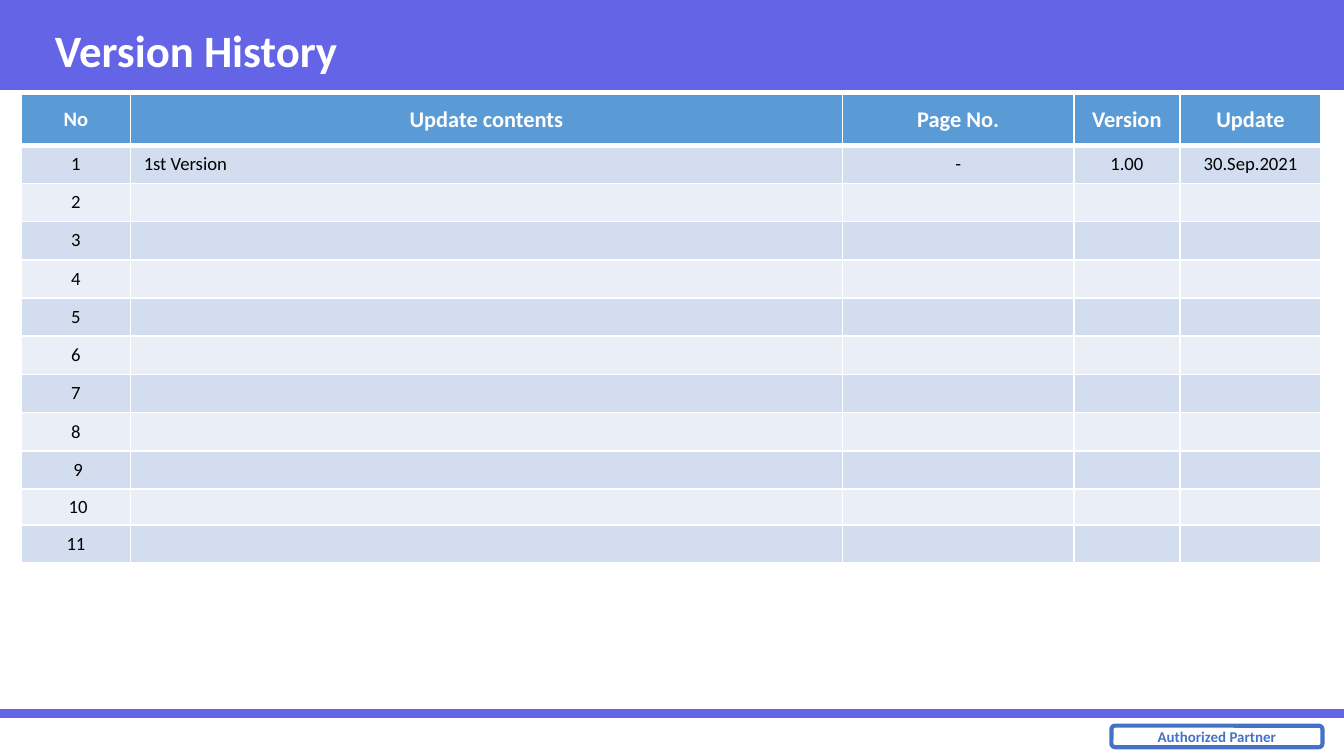
"""Build the version history slide."""
from lxml import etree
from pptx import Presentation
from pptx.dml.color import RGBColor
from pptx.enum.shapes import MSO_CONNECTOR, MSO_SHAPE
from pptx.enum.text import MSO_ANCHOR, PP_ALIGN
from pptx.oxml.ns import qn
from pptx.util import Inches, Pt

RECT, ROUND = MSO_SHAPE.RECTANGLE, MSO_SHAPE.ROUNDED_RECTANGLE
STRAIGHT = MSO_CONNECTOR.STRAIGHT
MIDDLE = MSO_ANCHOR.MIDDLE
LEFT, CENTER = PP_ALIGN.LEFT, PP_ALIGN.CENTER

FONT = "Calibri"
VIOLET = RGBColor(0x64, 0x64, 0xE6)
BLUE = RGBColor(0x44, 0x72, 0xC4)
SKY = RGBColor(0x5B, 0x9B, 0xD5)
PALE = RGBColor(0xD2, 0xDE, 0xEF)
MIST = RGBColor(0xEA, 0xEF, 0xF7)
WHITE = RGBColor(0xFF, 0xFF, 0xFF)
BLACK = RGBColor(0x00, 0x00, 0x00)

HEADS = ["No", "Update contents", "Page No.", "Version", "Update"]
FIRST = ["1", "1st Version", "-", "1.00", "30.Sep.2021"]
LATER = ["2", "3", "4", "5", "6", "7", "8", " 9", " 10", "11"]
WIDTHS = [0.81, 5.3, 1.72, 0.79, 1.05]
WIDE, TALL = 10, 3.49
HEAD, TAIL = 0.38, [0.27, 0.28]


def write(frame, text, size, color, bold=False, align=CENTER):
    """Put one styled paragraph into a text frame."""
    frame.text = text
    para = frame.paragraphs[0]
    para.alignment = align
    for run in para.runs:
        font = run.font
        font.name, font.size, font.bold = FONT, Pt(size), bold
        font.color.rgb = color
    if not text:
        end = etree.SubElement(para._p, qn("a:endParaRPr"))
        end.set("sz", str(size * 100))


def add_band(slide):
    """Add the title band and its heading."""
    band = slide.shapes.add_shape(RECT, 0, 0, Inches(WIDE), Inches(0.67))
    band.shadow.inherit = False
    band.fill.solid()
    band.fill.fore_color.rgb = VIOLET
    band.line.fill.background()
    box = slide.shapes.add_textbox(
        Inches(0.31), Inches(0.08), Inches(9.26), Inches(0.58))
    frame = box.text_frame
    frame.word_wrap = True
    frame.vertical_anchor = MIDDLE
    write(frame, "Version History", 24, WHITE, True, LEFT)


def add_foot(slide):
    """Add the footer rule and the partner badge."""
    rule = slide.shapes.add_connector(
        STRAIGHT, 0, Inches(5.31), Inches(WIDE), Inches(5.31))
    rule.line.color.rgb = VIOLET
    rule.line.width = Pt(4.5)
    etree.SubElement(rule._element.spPr, qn("a:effectLst"))
    badge = slide.shapes.add_shape(
        ROUND, Inches(8.27), Inches(5.4), Inches(1.57), Inches(0.16))
    badge.shadow.inherit = False
    badge.fill.background()
    badge.line.color.rgb = BLUE
    badge.line.width = Pt(2.25)
    frame = badge.text_frame
    frame.word_wrap = False
    frame.vertical_anchor = MIDDLE
    write(frame, "Authorized Partner", 8, BLUE, True)


def add_edge(cell, side, width):
    """Draw one white border of a cell."""
    edge = etree.SubElement(
        cell._tc.get_or_add_tcPr(), qn("a:ln" + side), w=str(Pt(width)))
    fill = etree.SubElement(edge, qn("a:solidFill"))
    etree.SubElement(fill, qn("a:srgbClr"), val=str(WHITE))


def style_cell(cell, row, color):
    """Set the borders, fill and anchor of a cell."""
    for side in "LRTB":
        thick = (row, side) in ((0, "B"), (1, "T"))
        add_edge(cell, side, 3 if thick else 1)
    cell.fill.solid()
    cell.fill.fore_color.rgb = color
    cell.vertical_anchor = MIDDLE


def add_grid(slide):
    """Add the table of versions."""
    blank = [""] * (len(HEADS) - 1)
    rows = [HEADS, FIRST] + [[num] + blank for num in LATER]
    count = len(rows) - 1 - len(TAIL)
    step = (TALL - HEAD - sum(TAIL)) / count
    table = slide.shapes.add_table(
        len(rows), len(HEADS), Inches(0.16), Inches(0.7),
        Inches(sum(WIDTHS)), Inches(TALL)).table
    for col, width in zip(table.columns, WIDTHS):
        col.width = Inches(width)
    for row, high in zip(table.rows, [HEAD] + [step] * count + TAIL):
        row.height = Inches(high)
    for r, texts in enumerate(rows):
        for c, text in enumerate(texts):
            cell = table.cell(r, c)
            if r == 0:
                style_cell(cell, r, SKY)
                write(cell.text_frame, text, 12 if c else 11, WHITE, True)
            else:
                style_cell(cell, r, PALE if r % 2 else MIST)
                align = LEFT if c == 1 else CENTER
                write(cell.text_frame, text, 10, BLACK, align=align)


def main():
    """Build and save the deck."""
    deck = Presentation()
    deck.slide_width = Inches(WIDE)
    deck.slide_height = Inches(WIDE * 9 / 16)
    slide = deck.slides.add_slide(deck.slide_layouts[6])
    add_band(slide)
    add_foot(slide)
    add_grid(slide)
    deck.save("out.pptx")


if __name__ == "__main__":
    main()
